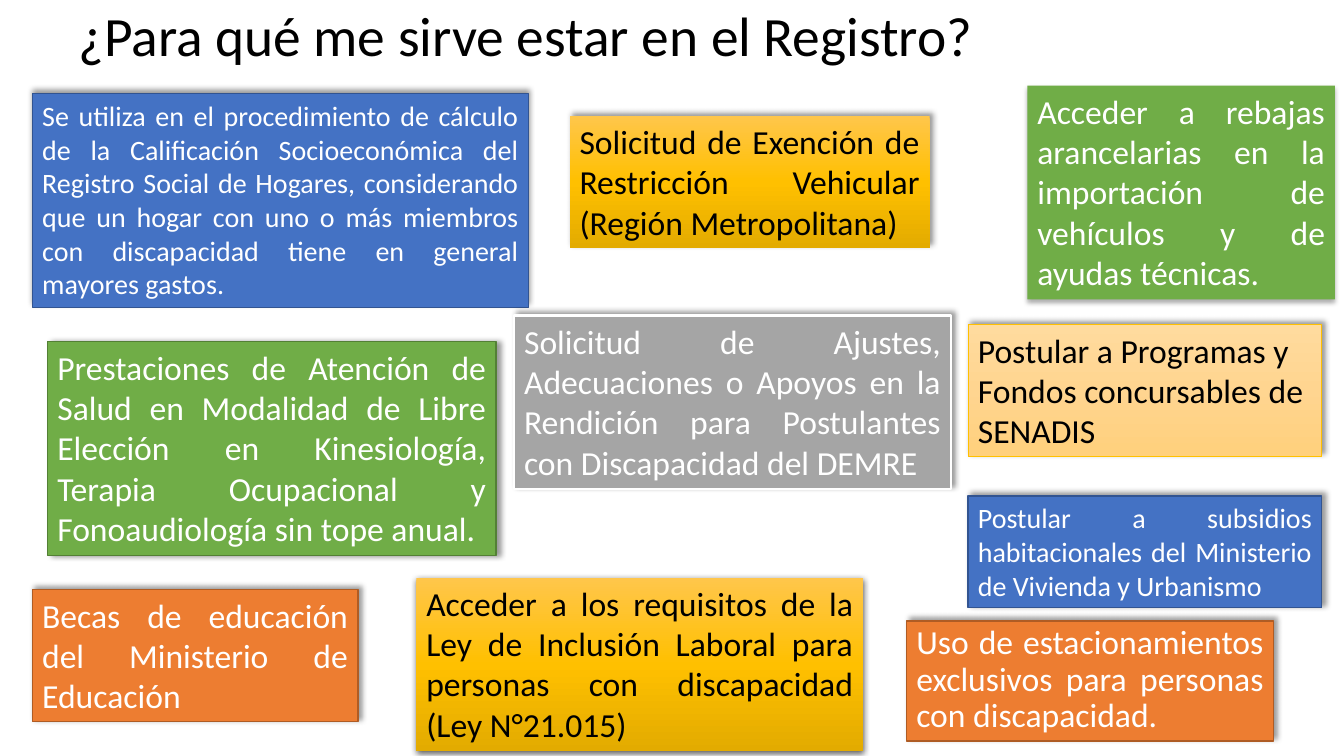
from pptx import Presentation
from pptx.dml.color import RGBColor
from pptx.enum.shapes import MSO_SHAPE
from pptx.enum.text import MSO_ANCHOR, MSO_AUTO_SIZE, PP_ALIGN
from pptx.oxml import parse_xml
from pptx.oxml.ns import nsdecls, qn
from pptx.util import Inches, Pt

RECTANGLE = MSO_SHAPE.RECTANGLE
MIDDLE, TOP = MSO_ANCHOR.MIDDLE, MSO_ANCHOR.TOP
GROW = MSO_AUTO_SIZE.SHAPE_TO_FIT_TEXT
LEFT, JUSTIFY = PP_ALIGN.LEFT, PP_ALIGN.JUSTIFY

BLACK = RGBColor(0x00, 0x00, 0x00)
WHITE = RGBColor(0xFF, 0xFF, 0xFF)
BLUE = RGBColor(0x44, 0x72, 0xC4)
DARK_BLUE = RGBColor(0x32, 0x54, 0x91)
GREEN = RGBColor(0x70, 0xAD, 0x47)
DARK_GREEN = RGBColor(0x53, 0x80, 0x35)
ORANGE = RGBColor(0xED, 0x7D, 0x31)
DARK_ORANGE = RGBColor(0xAF, 0x5C, 0x24)
GRAY = RGBColor(0xA5, 0xA5, 0xA5)
GOLD = RGBColor(0xFF, 0xC0, 0x00)
GOLD_BLEND = (RGBColor(0xFF, 0xC6, 0x4B), GOLD, RGBColor(0xE3, 0xAB, 0x00))
CREAM_BLEND = (RGBColor(0xFF, 0xDB, 0x9E), RGBColor(0xFF, 0xD5, 0x90),
               RGBColor(0xFF, 0xD0, 0x7C))

# Shadows: opacity %, blur pt, distance pt, direction in degrees
UP_RIGHT = (40, 4, 3, 315)
UP = (40, 4, 3, 270)
RIGHT = (40, 4, 3, 0)
DOWN_STRONG = (63, 4.5, 1.5, 90)
DOWN_SOFT = (32, 3.5, 2.2, 90)

# Looks: fill, line colour, line width, text colour
BLUE_LOOK = (BLUE, DARK_BLUE, 1, WHITE)
GREEN_LOOK = (GREEN, DARK_GREEN, 1, WHITE)
PLAIN_GREEN_LOOK = (GREEN, None, 0, WHITE)
ORANGE_LOOK = (ORANGE, DARK_ORANGE, 1, WHITE)
GRAY_LOOK = (GRAY, WHITE, 1.5, WHITE)
GOLD_LOOK = (GOLD_BLEND, None, 0, BLACK)
CREAM_LOOK = (CREAM_BLEND, GOLD, 0.5, BLACK)

# Benefits: place, look, shadow, text size, alignment, line spacing, wording
BENEFITS = [
    ((8.99, 6.16, 3.64, 1.19), ORANGE_LOOK, UP_RIGHT, 24, JUSTIFY, 0.9,
     "Uso de estacionamientos exclusivos para personas con discapacidad."),
    ((0.32, 0.93, 4.92, 2.12), BLUE_LOOK, UP, 20, JUSTIFY, 1.0,
     "Se utiliza en el procedimiento de cálculo de la Calificación "
     "Socioeconómica del Registro Social de Hogares, considerando que un hogar "
     "con uno o más miembros con discapacidad tiene en general mayores gastos."),
    ((0.47, 3.39, 4.45, 2.12), GREEN_LOOK, RIGHT, 24, JUSTIFY, 1.0,
     "Prestaciones de Atención de Salud en Modalidad de Libre Elección en "
     "Kinesiología, Terapia Ocupacional y Fonoaudiología sin tope anual."),
    ((9.6, 3.22, 3.51, 1.31), CREAM_LOOK, UP_RIGHT, 24, LEFT, 1.0,
     "Postular a Programas y Fondos concursables de SENADIS"),
    ((4.13, 5.73, 4.43, 1.72), GOLD_LOOK, DOWN_STRONG, 24, JUSTIFY, 1.0,
     "Acceder a los requisitos de la Ley de Inclusión Laboral para personas "
     "con discapacidad (Ley N°21.015)"),
    ((9.6, 4.92, 3.51, 1.11), BLUE_LOOK, UP_RIGHT, 20, JUSTIFY, 1.0,
     "Postular a subsidios habitacionales del Ministerio de Vivienda y "
     "Urbanismo"),
    ((0.32, 5.85, 3.23, 1.31), ORANGE_LOOK, UP_RIGHT, 24, JUSTIFY, 1.0,
     "Becas de educación del Ministerio de Educación"),
    ((5.1, 3.13, 4.33, 1.72), GRAY_LOOK, UP_RIGHT, 24, JUSTIFY, 1.0,
     "Solicitud de Ajustes, Adecuaciones o Apoyos en la Rendición para "
     "Postulantes con Discapacidad del DEMRE"),
    ((5.65, 1.15, 3.57, 1.31), GOLD_LOOK, UP_RIGHT, 24, JUSTIFY, 1.0,
     "Solicitud de Exención de Restricción Vehicular (Región Metropolitana)"),
    ((10.19, 0.85, 3.05, 2.12), PLAIN_GREEN_LOOK, DOWN_SOFT, 24, JUSTIFY, 1.0,
     "Acceder a rebajas arancelarias en la importación de vehículos y de "
     "ayudas técnicas."),
]


class SlideBuilder:
    """Holds the text style and the current slide."""

    def __init__(self, page, font="Calibri"):
        self.page = page
        self.font = font

    def fill_text(self, box, wording, size, color, align, spacing, anchor):
        frame = box.text_frame
        frame.text = wording
        frame.word_wrap = True
        frame.vertical_anchor = anchor
        para = frame.paragraphs[0]
        para.alignment = align
        para.line_spacing = spacing
        span = para.runs[0]
        span.font.name = self.font
        span.font.size = Pt(size)
        span.font.color.rgb = color

    def title(self, place, wording):
        box = self.page.shapes.add_textbox(*map(Inches, place))
        self.fill_text(box, wording, 39.6, BLACK, LEFT, 0.9, MIDDLE)

    def paint(self, box, fill):
        if isinstance(fill, RGBColor):
            box.fill.solid()
            box.fill.fore_color.rgb = fill
            return
        # Vertical blend with evenly spaced stops
        box.fill.gradient()
        gradient = box._element.spPr.find(qn("a:gradFill"))
        step = 100000 // (len(fill) - 1)
        stops = "".join(
            f'<a:gs pos="{index * step}"><a:srgbClr val="{color}"/></a:gs>'
            for index, color in enumerate(fill))
        gradient.replace(
            gradient.find(qn("a:gsLst")),
            parse_xml(f'<a:gsLst {nsdecls("a")}>{stops}</a:gsLst>'))
        gradient.find(qn("a:lin")).set("ang", "5400000")

    def cast_shadow(self, box, shadow):
        opacity, blur, distance, direction = shadow
        box.shadow.inherit = False
        box._element.spPr.find(qn("a:effectLst")).append(parse_xml(
            f'<a:outerShdw {nsdecls("a")} blurRad="{Pt(blur)}" '
            f'dist="{Pt(distance)}" dir="{direction * 60000}" '
            f'algn="ctr" rotWithShape="0"><a:srgbClr val="{BLACK}">'
            f'<a:alpha val="{opacity * 1000}"/></a:srgbClr></a:outerShdw>'))

    def benefit(self, place, look, shadow, size, align, spacing, wording):
        fill, line, width, color = look
        box = self.page.shapes.add_shape(RECTANGLE, *map(Inches, place))
        self.paint(box, fill)
        if line is None:
            box.line.fill.background()
        else:
            box.line.color.rgb = line
            box.line.width = Pt(width)
        self.cast_shadow(box, shadow)
        self.fill_text(box, wording, size, color, align, spacing, TOP)
        box.text_frame.auto_size = GROW


def main():
    deck = Presentation()
    deck.slide_width, deck.slide_height = Inches(13.33), Inches(7.5)
    builder = SlideBuilder(deck.slides.add_slide(deck.slide_layouts[6]))

    # Heading
    builder.title((0.68, 0.06, 11.5, 0.65),
                  "¿Para qué me sirve estar en el Registro?")

    # Benefit boxes, back to front
    for benefit in BENEFITS:
        builder.benefit(*benefit)

    deck.save("out.pptx")


if __name__ == "__main__":
    main()
